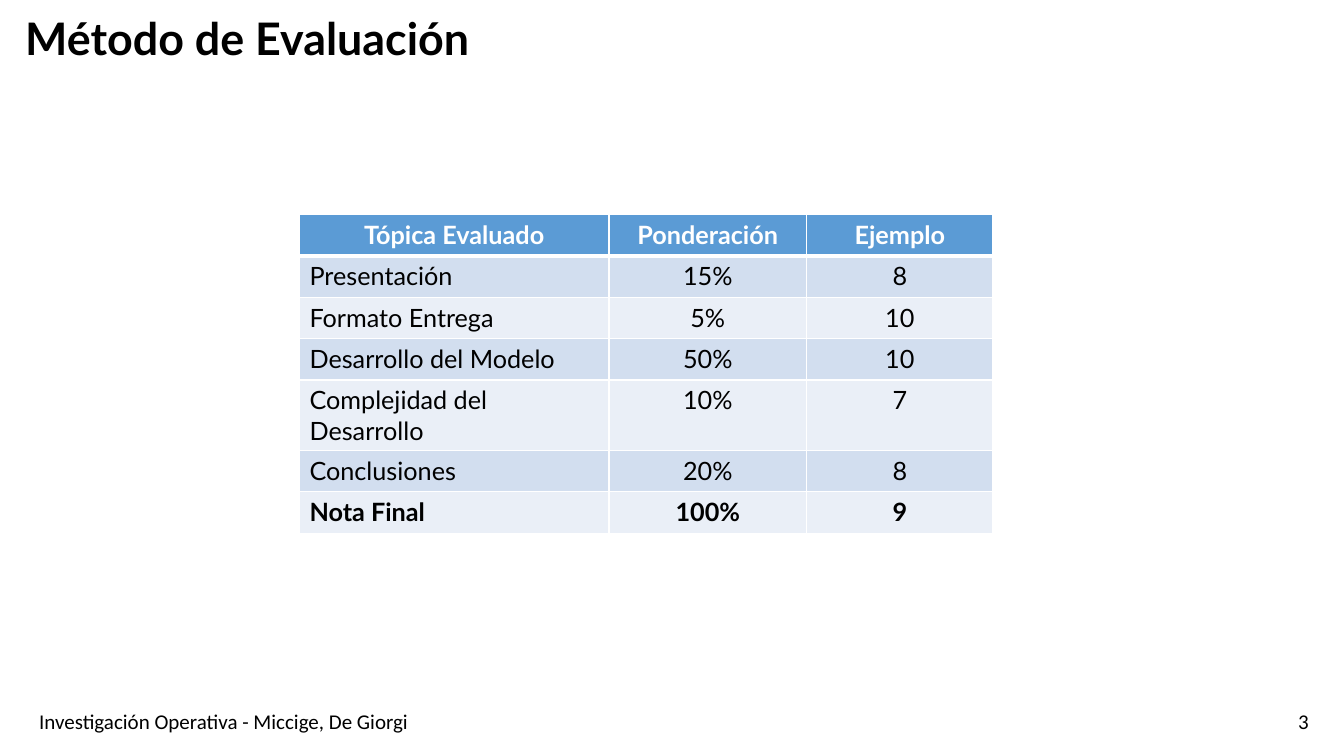
"""Builds the slide that shows how the course work is graded."""
import dataclasses

import pptx
import pptx.dml.color
import pptx.enum.text
import pptx.oxml
import pptx.oxml.ns
import pptx.util
from pptx.util import Inches

ALIGN = pptx.enum.text.PP_ALIGN
ANCHOR = pptx.enum.text.MSO_ANCHOR


@dataclasses.dataclass(frozen=True)
class Theme:
    """Fonts, colours and type sizes of the slide."""
    body_font: str = "Lato"
    footer_font: str = "Calibri"
    text: str = "000000"
    white: str = "FFFFFF"
    header: str = "5B9BD5"
    bands: tuple = ("D2DEEF", "EAEFF7")
    title_size: int = 32
    table_size: int = 18
    footer_size: int = 15


THEME = Theme()
COLUMN_WIDTHS = (3.07, 1.96, 1.85)
ROW_HEIGHT = 0.41
GRADES = (
    ("Tópica Evaluado", "Ponderación", "Ejemplo"),
    ("Presentación", "15%", "8"),
    ("Formato Entrega", "5%", "10"),
    ("Desarrollo del Modelo", "50%", "10"),
    ("Complejidad del Desarrollo", "10%", "7"),
    ("Conclusiones", "20%", "8"),
    ("Nota Final", "100%", "9"),
)


def rgb(value):
    """Turn a hex string into a colour."""
    return pptx.dml.color.RGBColor.from_string(value)


def style(para, font, size, color=THEME.text, bold=False, align=ALIGN.LEFT):
    """Set the type and alignment of a paragraph."""
    para.alignment = align
    para.font.name = font
    para.font.size = pptx.util.Pt(size)
    para.font.bold = bold
    para.font.color.rgb = rgb(color)


def set_title(page, text):
    """Place and format the title placeholder."""
    title = page.shapes.title
    title.left, title.top = Inches(0.25), Inches(0.36)
    title.width, title.height = Inches(12.81), Inches(0.54)
    frame = title.text_frame
    frame.text = text
    frame.auto_size = pptx.enum.text.MSO_AUTO_SIZE.NONE
    frame.vertical_anchor = ANCHOR.TOP
    frame.margin_left = frame.margin_right = 0
    frame.margin_top = frame.margin_bottom = 0
    para = frame.paragraphs[0]
    para.line_spacing = pptx.util.Pt(20)
    style(para, THEME.body_font, THEME.title_size, bold=True)


def add_footer(page, text, left, width, align):
    """Add a text box on the footer line."""
    box = page.shapes.add_textbox(
        Inches(left), Inches(6.95), Inches(width), Inches(0.4))
    frame = box.text_frame
    frame.word_wrap = True
    frame.vertical_anchor = ANCHOR.MIDDLE
    frame.text = text
    style(frame.paragraphs[0], THEME.footer_font, THEME.footer_size, align=align)


def set_borders(cell, bottom):
    """Draw white cell borders, with the bottom one in the given points."""
    properties = cell._tc.get_or_add_tcPr()
    widths = {"lnL": 1, "lnR": 1, "lnT": 1, "lnB": bottom}
    for index, (side, width) in enumerate(widths.items()):
        line = pptx.oxml.parse_xml(
            f'<a:{side} {pptx.oxml.ns.nsdecls("a")} w="{pptx.util.Pt(width)}">'
            f'<a:solidFill><a:srgbClr val="{THEME.white}"/></a:solidFill>'
            f'</a:{side}>')
        properties.insert(index, line)


def add_grades(page, rows):
    """Add the grade table with a header, banded rows and a bold total."""
    frame = page.shapes.add_table(
        len(rows), len(COLUMN_WIDTHS), Inches(2.97), Inches(2.13),
        Inches(sum(COLUMN_WIDTHS)), Inches(ROW_HEIGHT * len(rows)))
    table = frame.table
    for column, width in zip(table.columns, COLUMN_WIDTHS):
        column.width = Inches(width)
    for i, row in enumerate(rows):
        table.rows[i].height = Inches(ROW_HEIGHT)
        is_header = i == 0
        fill = THEME.header if is_header else THEME.bands[(i - 1) % 2]
        for j, text in enumerate(row):
            cell = table.cell(i, j)
            cell.text = text
            cell.fill.solid()
            cell.fill.fore_color.rgb = rgb(fill)
            set_borders(cell, bottom=3 if is_header else 1)
            style(cell.text_frame.paragraphs[0],
                  THEME.body_font, THEME.table_size,
                  color=THEME.white if is_header else THEME.text,
                  bold=i in (0, len(rows) - 1),
                  align=ALIGN.CENTER if is_header or j else ALIGN.LEFT)


def main():
    """Build and save the deck."""
    deck = pptx.Presentation()
    deck.slide_width, deck.slide_height = Inches(13.33), Inches(7.5)
    page = deck.slides.add_slide(deck.slide_layouts.get_by_name("Title Only"))
    set_title(page, "Método de Evaluación")
    add_grades(page, GRADES)
    add_footer(page, "Investigación Operativa - Miccige, De Giorgi",
               0.29, 4.5, ALIGN.LEFT)
    add_footer(page, "3", 10.08, 3, ALIGN.RIGHT)
    deck.save("out.pptx")


if __name__ == "__main__":
    main()
